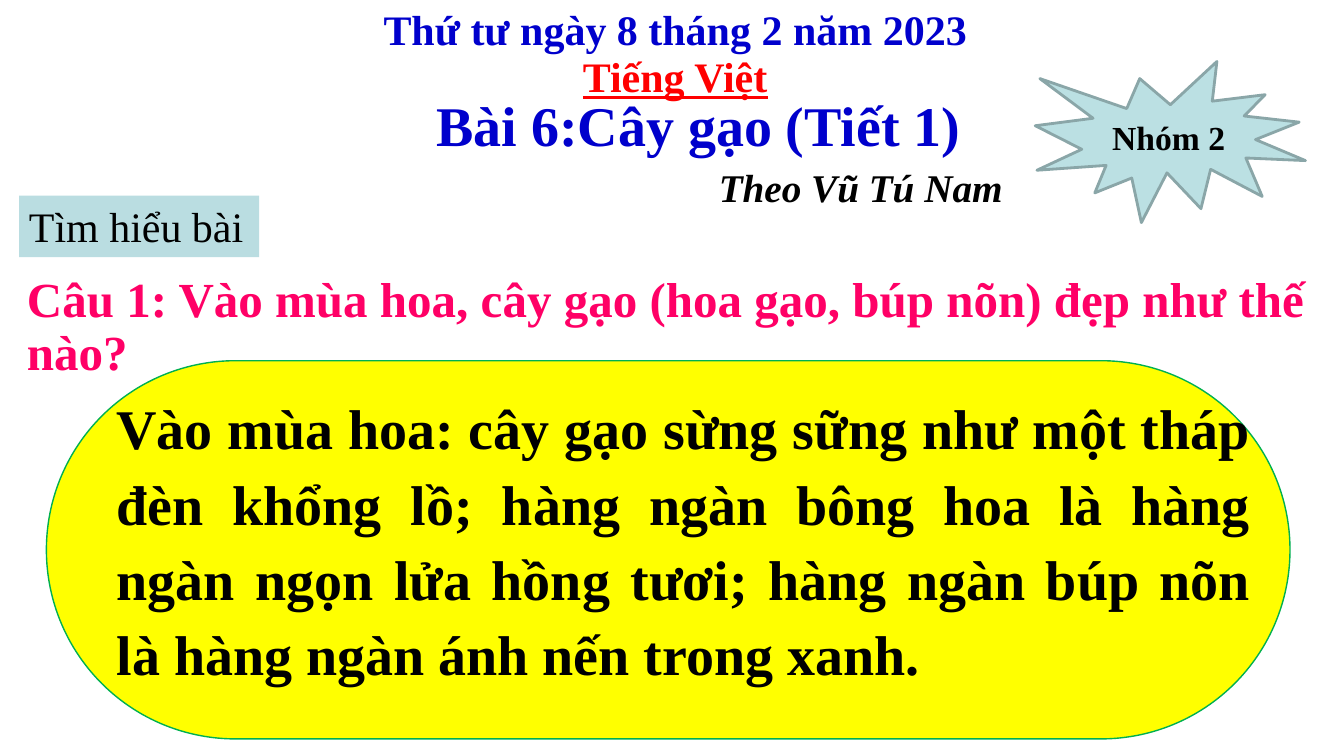
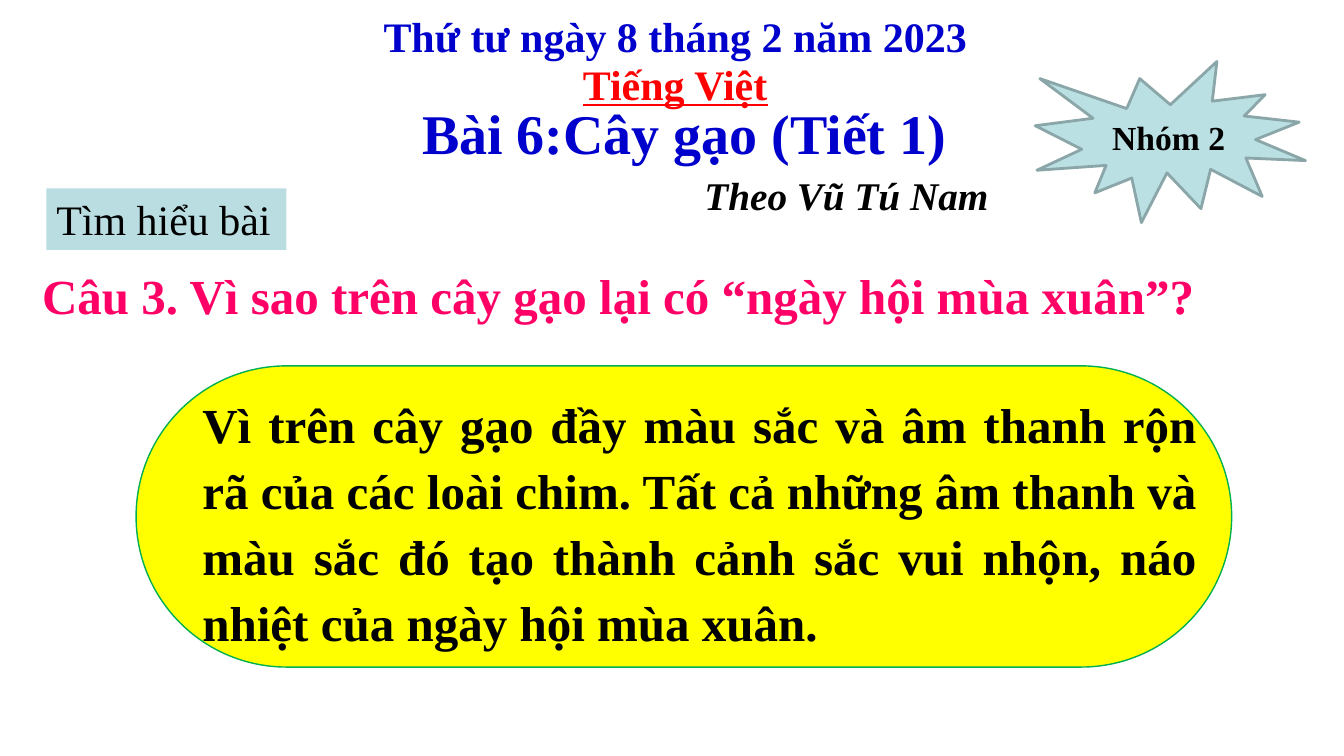
from pptx import Presentation
from pptx.dml.color import RGBColor
from pptx.enum.shapes import MSO_SHAPE
from pptx.enum.text import MSO_ANCHOR, MSO_AUTO_SIZE, PP_ALIGN
from pptx.util import Cm, Pt

COLORS = {
    "heading": "0000CC",
    "subject": "FF0000",
    "question": "FF0066",
    "ink": "000000",
    "label": "BADDE1",
    "burst": "BBE0E3",
    "burst_edge": "8AA6A8",
    "answer": "FFFF00",
    "answer_edge": "00B050",
}
FONT = "Times New Roman"
TITLE_ONLY = 5

LESSONS = [
    {
        "header_top": -0.03,
        "title_left": 8.92,
        "label": (0.48, 4.93),
        "question_box": (0.43, 6.81, 33.07, 2.95),
        "question": "Câu 1: Vào mùa hoa, cây gạo (hoa gạo, búp nõn) đẹp như thế nào?",
        "answer_box": (1.17, 9.09, 31.34, 9.53),
        "answer_insets": (1.52, 0.51, 0.76, 1.1),
        "answer_size": 40,
        "answer": "Vào mùa hoa: cây gạo sừng sững như một tháp đèn khổng lồ; "
                  "hàng ngàn bông hoa là hàng ngàn ngọn lửa hồng tươi; "
                  "hàng ngàn búp nõn là hàng ngàn ánh nến trong xanh.",
    },
    {
        "header_top": 0.15,
        "title_left": 8.56,
        "label": (1.17, 4.75),
        "question_box": (0.81, 6.73, 32.8, 1.6),
        "question": "Câu 3. Vì sao trên cây gạo lại có “ngày hội mùa xuân”?",
        "answer_box": (3.43, 9.22, 27.61, 7.59),
        "answer_insets": (1.42, 0.43, 0.61, 0.2),
        "answer_size": 35,
        "answer": "Vì trên cây gạo đầy màu sắc và âm thanh rộn rã của các loài chim. "
                  "Tất cả những âm thanh và màu sắc đó tạo thành cảnh sắc vui nhộn, "
                  "náo nhiệt của ngày hội mùa xuân.",
    },
]


def rgb(key):
    return RGBColor.from_string(COLORS[key])


def style(paragraph, size, color, bold=True, italic=False, underline=False,
          align=PP_ALIGN.LEFT, spacing=1.0):
    paragraph.alignment = align
    paragraph.line_spacing = spacing
    paragraph.space_before = Pt(0)
    for run in paragraph.runs:
        font = run.font
        font.name = FONT
        font.size = Pt(size)
        font.bold = bold
        font.italic = italic
        font.underline = underline
        font.color.rgb = rgb(color)


def add_text(shapes, box, text, size, color, wrap=True, **look):
    caption = shapes.add_textbox(*map(Cm, box))
    frame = caption.text_frame
    frame.word_wrap = wrap
    frame.text = text
    style(frame.paragraphs[0], size, color, **look)


def add_panel(shapes, preset, box, fill, edge=None, edge_width=1):
    panel = shapes.add_shape(preset, *map(Cm, box))
    panel.shadow.inherit = False
    panel.fill.solid()
    panel.fill.fore_color.rgb = rgb(fill)
    if edge:
        panel.line.color.rgb = rgb(edge)
        panel.line.width = Pt(edge_width)
    else:
        panel.line.fill.background()
    return panel


def add_header(slide, top, title_left):
    add_text(slide.shapes, (7.8, top, 18.44, 1.52),
             "Thứ tư ngày 8 tháng 2 năm 2023", 30, "heading", align=PP_ALIGN.CENTER)
    add_text(slide.shapes, (14.44, top + 1.19, 5.21, 1.52),
             "Tiếng Việt", 30, "subject", wrap=False, underline=True)

    title = slide.shapes.title
    title.left, title.top = Cm(title_left), Cm(top + 2.17)
    title.width, title.height = Cm(17.36), Cm(3.38)
    frame = title.text_frame
    frame.auto_size = MSO_AUTO_SIZE.NONE
    frame.word_wrap = True
    frame.vertical_anchor = MSO_ANCHOR.TOP
    frame.margin_left = frame.margin_right = Cm(0.3)
    frame.margin_top = frame.margin_bottom = Cm(0.15)
    frame.text = "Bài 6:Cây gạo (Tiết 1)\nTheo Vũ Tú Nam"
    lesson_name, author = frame.paragraphs
    style(lesson_name, 40, "heading", align=PP_ALIGN.CENTER)
    style(author, 28, "ink", italic=True, align=PP_ALIGN.CENTER)
    author.space_before = Pt(4)
    author_indent = author._p.get_or_add_pPr()
    author_indent.set("marL", str(Cm(8.18)))
    author_indent.set("indent", "0")


def add_section_label(slide, left, top):
    label = add_panel(slide.shapes, MSO_SHAPE.RECTANGLE, (left, top, 6.05, 1.55), "label")
    frame = label.text_frame
    frame.word_wrap = True
    frame.vertical_anchor = MSO_ANCHOR.TOP
    frame.text = "Tìm hiểu bài"
    style(frame.paragraphs[0], 30, "ink", bold=False)


def add_group_burst(slide, box):
    burst = add_panel(slide.shapes, MSO_SHAPE.EXPLOSION1, box, "burst", "burst_edge", 2)
    frame = burst.text_frame
    frame.vertical_anchor = MSO_ANCHOR.MIDDLE
    frame.text = "Nhóm 2"
    style(frame.paragraphs[0], 24, "ink", align=PP_ALIGN.CENTER)


def add_answer(slide, box, insets, text, size):
    left, top, width, height = box
    inset_left, inset_top, inset_right, inset_bottom = insets
    answer = slide.shapes.add_group_shape()
    capsule = add_panel(answer.shapes, MSO_SHAPE.ROUNDED_RECTANGLE, box,
                        "answer", "answer_edge")
    capsule.adjustments[0] = 0.5
    text_box = (left + inset_left, top + inset_top,
                width - inset_left - inset_right, height - inset_top - inset_bottom)
    add_text(answer.shapes, text_box, text, size, "ink",
             align=PP_ALIGN.JUSTIFY, spacing=1.12)


def add_lesson_slide(deck, lesson):
    slide = deck.slides.add_slide(deck.slide_layouts[TITLE_ONLY])
    add_text(slide.shapes, lesson["question_box"], lesson["question"], 35, "question",
             spacing=0.9)
    add_answer(slide, lesson["answer_box"], lesson["answer_insets"],
               lesson["answer"], lesson["answer_size"])
    add_section_label(slide, *lesson["label"])
    add_group_burst(slide, (26.09, 1.55, 6.81, 4.06))
    add_header(slide, lesson["header_top"], lesson["title_left"])


def main():
    deck = Presentation()
    deck.slide_width, deck.slide_height = Cm(33.87), Cm(19.05)
    for lesson in LESSONS:
        add_lesson_slide(deck, lesson)
    deck.save("out.pptx")


if __name__ == "__main__":
    main()
